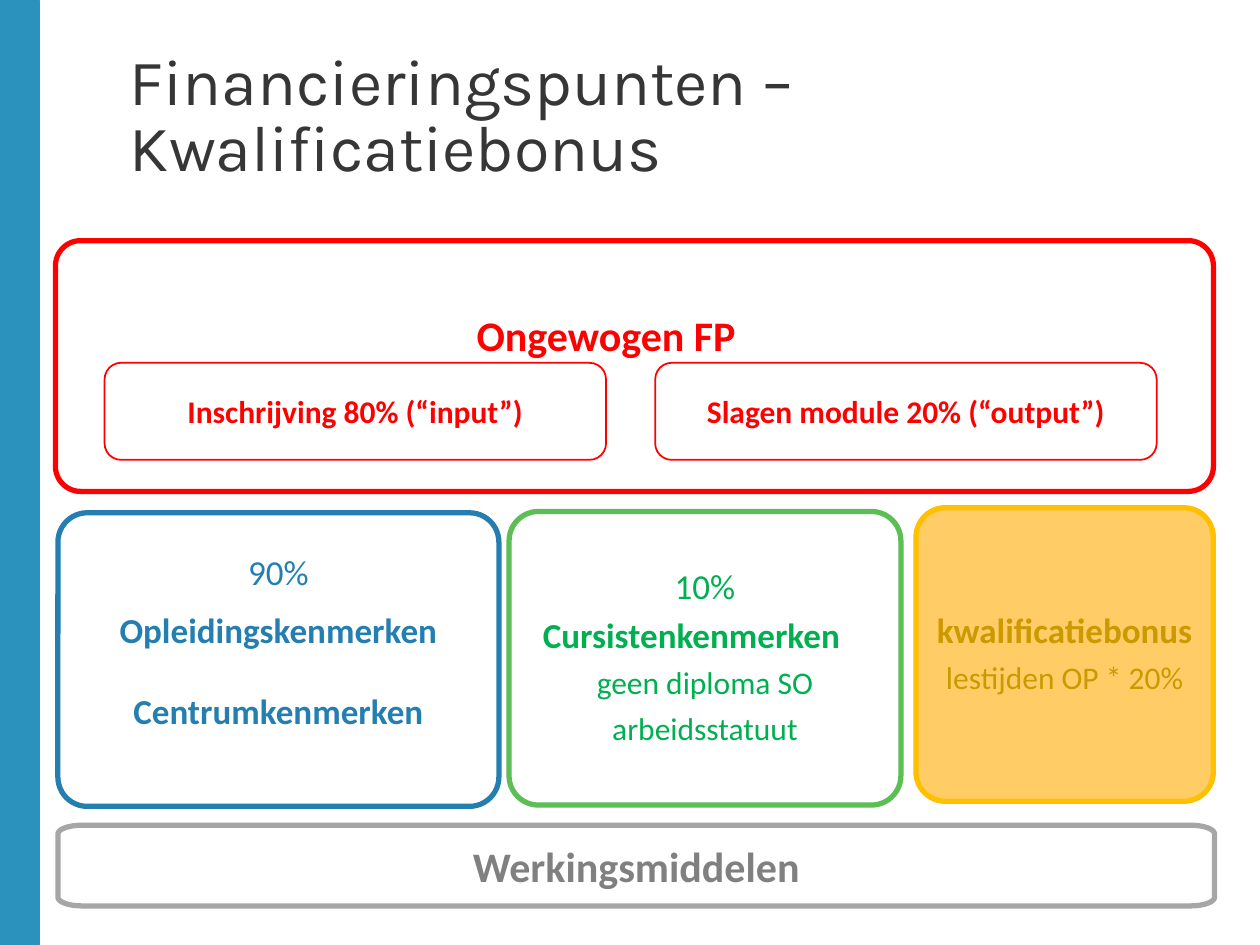
from dataclasses import dataclass
from math import cos, pi, sin

from pptx import Presentation
from pptx.dml.color import RGBColor
from pptx.enum.shapes import MSO_SHAPE
from pptx.enum.text import MSO_ANCHOR, PP_ALIGN
from pptx.util import Inches, Pt

WHITE = RGBColor(0xFF, 0xFF, 0xFF)
SIDEBAR_BLUE = RGBColor(0x2B, 0x92, 0xBE)
TITLE_GREY = RGBColor(0x37, 0x36, 0x36)
RED = RGBColor(0xFF, 0x00, 0x00)
BLUE = RGBColor(0x24, 0x7F, 0xB0)
GREEN = RGBColor(0x00, 0xB0, 0x50)
GREEN_EDGE = RGBColor(0x5D, 0xBE, 0x55)
GOLD = RGBColor(0xCC, 0x99, 0x00)
GOLD_FILL = RGBColor(0xFF, 0xCC, 0x66)
GOLD_EDGE = RGBColor(0xFF, 0xC0, 0x00)
GREY = RGBColor(0x80, 0x80, 0x80)
GREY_EDGE = RGBColor(0xA6, 0xA6, 0xA6)


@dataclass
class Line:
    text: str
    size: float
    bold: bool = False
    before: float = 0
    spacing: float = 0.9
    left_indent: float | None = None  # set for left-aligned lines


@dataclass
class Panel:
    left: float
    top: float
    width: float
    height: float
    edge: RGBColor
    ink: RGBColor
    lines: list[Line]
    fill: RGBColor = WHITE
    edge_width: float = 3
    rounding: float = 0.1
    margins: tuple[float, float, float, float] = (0.15, 0.15, 0.15, 0.15)


def style(shape, fill: RGBColor, edge: RGBColor, edge_width: float) -> None:
    shape.shadow.inherit = False
    shape.fill.solid()
    shape.fill.fore_color.rgb = fill
    shape.line.color.rgb = edge
    shape.line.width = Pt(edge_width)


def write_lines(shape, panel: Panel) -> None:
    frame = shape.text_frame
    frame.word_wrap = True
    frame.vertical_anchor = MSO_ANCHOR.MIDDLE
    (frame.margin_left, frame.margin_top,
     frame.margin_right, frame.margin_bottom) = map(Inches, panel.margins)
    for index, line in enumerate(panel.lines):
        paragraph = frame.paragraphs[0] if index == 0 else frame.add_paragraph()
        paragraph.text = line.text
        paragraph.alignment = PP_ALIGN.CENTER
        if line.left_indent is not None:
            paragraph.alignment = PP_ALIGN.LEFT
            paragraph._p.get_or_add_pPr().set("marL", str(Inches(line.left_indent)))
        paragraph.line_spacing = line.spacing
        if index:
            paragraph.space_before = Pt(line.before)
        font = paragraph.font
        font.name, font.size, font.bold = "Calibri", Pt(line.size), line.bold
        font.color.rgb = panel.ink


def draw_panel(slide, panel: Panel) -> None:
    box = slide.shapes.add_shape(
        MSO_SHAPE.ROUNDED_RECTANGLE, Inches(panel.left), Inches(panel.top),
        Inches(panel.width), Inches(panel.height))
    box.adjustments[0] = panel.rounding
    style(box, panel.fill, panel.edge, panel.edge_width)
    write_lines(box, panel)


def draw_oval_cornered(slide, panel: Panel, rx: float, ry: float) -> None:
    """Draw a panel whose corners are quarter ellipses."""
    right, bottom = panel.left + panel.width, panel.top + panel.height
    centres = [(right - rx, bottom - ry), (panel.left + rx, bottom - ry),
               (panel.left + rx, panel.top + ry), (right - rx, panel.top + ry)]
    steps = 12
    points = []
    for quarter, (cx, cy) in enumerate(centres):
        for step in range(steps + 1):
            angle = (quarter + step / steps) * pi / 2
            points.append((Inches(cx + rx * cos(angle)), Inches(cy + ry * sin(angle))))
    builder = slide.shapes.build_freeform(*points[0])
    builder.add_line_segments(points[1:], close=True)
    box = builder.convert_to_shape()
    style(box, panel.fill, panel.edge, panel.edge_width)
    write_lines(box, panel)


def draw_title(slide, text: str) -> None:
    frame = slide.shapes.add_textbox(
        Inches(1.03), Inches(0.41), Inches(8.52), Inches(1.22)).text_frame
    frame.word_wrap = True
    frame.margin_left = frame.margin_top = frame.margin_right = frame.margin_bottom = 0
    title = frame.paragraphs[0]
    title.text = text
    title.line_spacing = Pt(38)
    title.font.name, title.font.size = "Karla", Pt(37)
    title.font.color.rgb = TITLE_GREY


def main() -> None:
    presentation = Presentation()
    presentation.slide_width, presentation.slide_height = Inches(10), Inches(7.5)
    slide = presentation.slides.add_slide(presentation.slide_layouts[6])

    # Sidebar and title
    sidebar = slide.shapes.add_shape(MSO_SHAPE.RECTANGLE, 0, 0, Inches(0.31), Inches(7.5))
    style(sidebar, SIDEBAR_BLUE, SIDEBAR_BLUE, 0.5)
    draw_title(slide, "Financieringspunten – Kwalificatiebonus")

    # Unweighted points, with the three weighting factors below
    draw_panel(slide, Panel(
        0.44, 1.91, 9.19, 1.99, RED, RED, [Line("Ongewogen FP", 24, True)],
        margins=(0.16, 0.16, 0.61, 0.61)))
    draw_panel(slide, Panel(
        0.46, 4.07, 3.5, 2.33, BLUE, BLUE,
        [Line("90%", 20, spacing=1),
         Line("Opleidingskenmerken", 20, True, before=9.5, spacing=1),
         Line("Centrumkenmerken", 20, True, before=22, spacing=1)],
        margins=(0.15, 0.15, 0.15, 0.45)))
    draw_panel(slide, Panel(
        4.04, 4.06, 3.11, 2.33, GREEN_EDGE, GREEN,
        [Line("10%", 20),
         Line("Cursistenkenmerken", 20, True, before=6.5, left_indent=0.05),
         Line("geen diploma SO", 18, before=6.5),
         Line("arbeidsstatuut", 18, before=6.5)]))
    draw_panel(slide, Panel(
        7.27, 4.03, 2.36, 2.33, GOLD_EDGE, GOLD,
        [Line("kwalificatiebonus", 20, True),
         Line("lestijden OP * 20%", 18, before=6.5)],
        fill=GOLD_FILL, margins=(0.05, 0.15, 0.05, 0.15)))

    # Input and output shares
    shares = ["Inschrijving 80% (“input”)", "Slagen module 20% (“output”)"]
    for column, share in enumerate(shares):
        draw_panel(slide, Panel(
            0.83 + column * 4.37, 2.88, 3.98, 0.77, RED, RED,
            [Line(share, 18, True, spacing=1)], edge_width=1, rounding=0.17,
            margins=(0.1, 0.05, 0.1, 0.05)))

    # Operating resources
    draw_oval_cornered(slide, Panel(
        0.46, 6.55, 9.18, 0.64, GREY_EDGE, GREY,
        [Line("Werkingsmiddelen", 24, True)],
        margins=(0.16, 0.1, 0.16, 0.05)), rx=0.19, ry=0.07)

    presentation.save("out.pptx")


if __name__ == "__main__":
    main()
